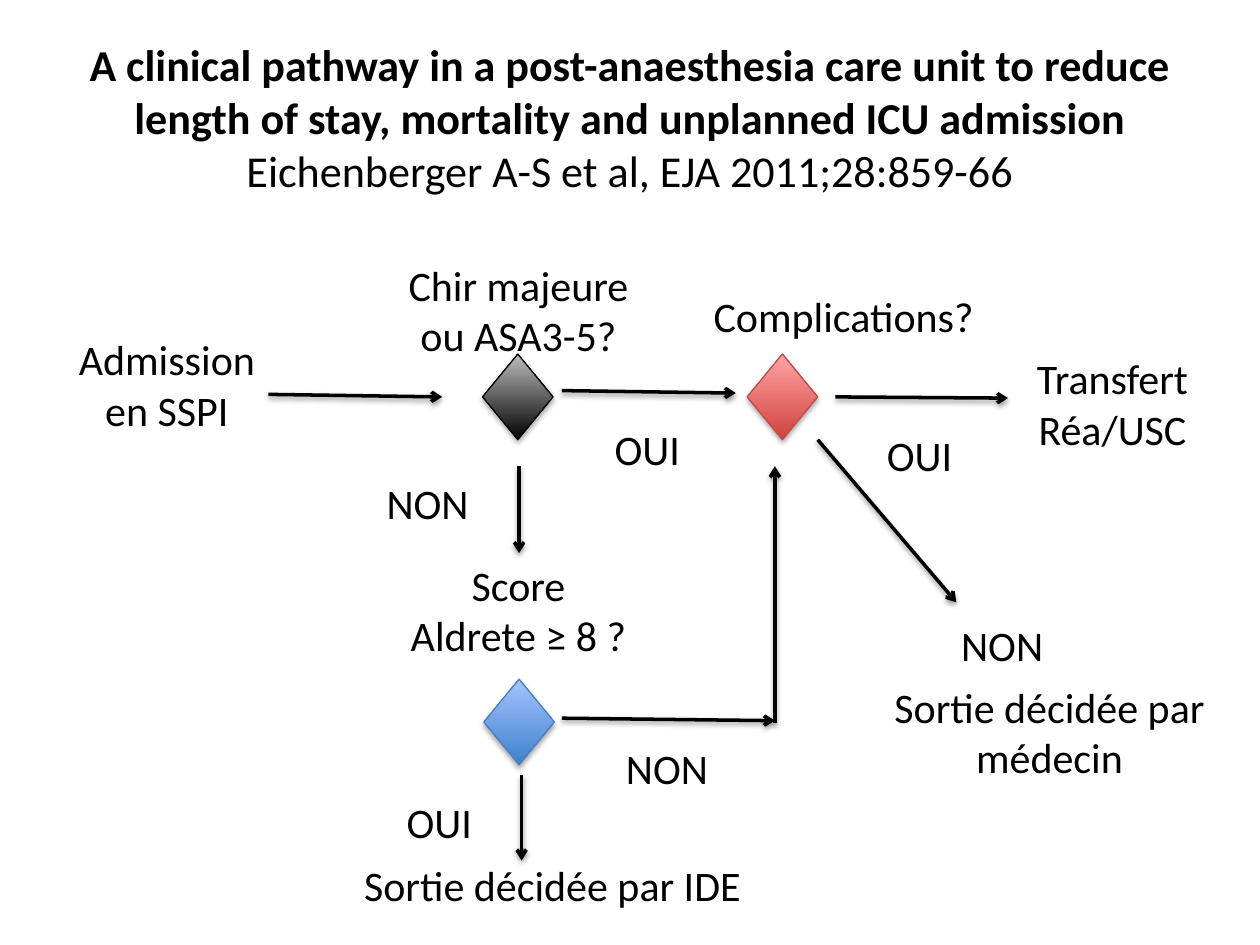
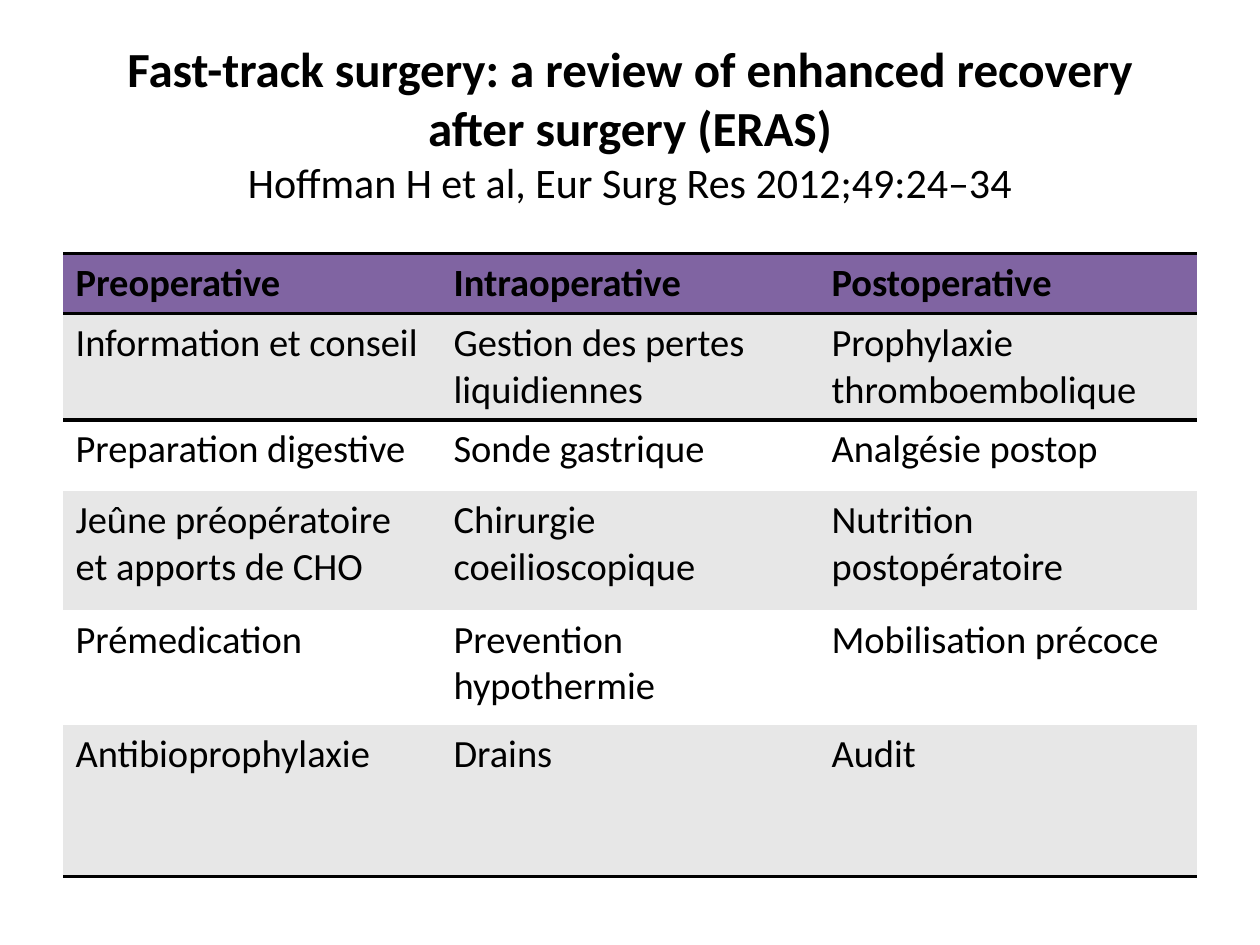
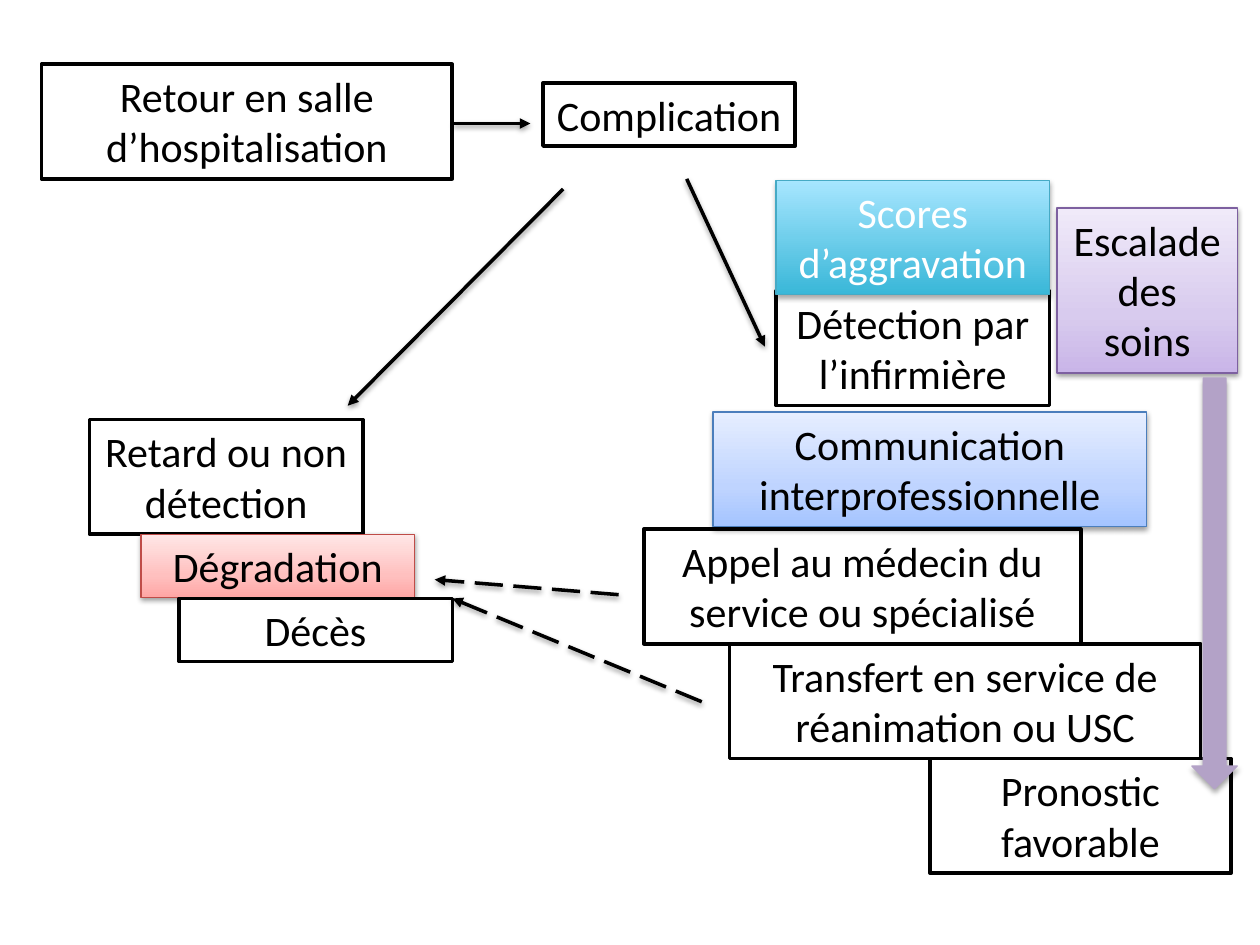
from dataclasses import dataclass
from typing import NamedTuple

from lxml.etree import SubElement
from pptx import Presentation
from pptx.dml.color import RGBColor
from pptx.enum.dml import MSO_LINE_DASH_STYLE as Dash
from pptx.enum.shapes import MSO_CONNECTOR as Connector, MSO_SHAPE as Preset
from pptx.enum.text import MSO_ANCHOR as Anchor, MSO_AUTO_SIZE as AutoSize, PP_ALIGN as Align
from pptx.oxml.ns import qn
from pptx.util import Inches, Pt

BLACK, WHITE = "000000", "FFFFFF"
HEADER_FILL, BAND_FILL = "8064A2", "E7E7E7"
FONT_NAME = "Calibri"
BODY_SIZE, TABLE_SIZE = 24, 22
NO_TABLE_STYLE = "{2D5ABB26-0587-4C30-8999-92F81FD0307C}"
TITLE_ONLY, BLANK = 5, 6


class Shadow(NamedTuple):
    opacity: int
    distance: float


class Look(NamedTuple):
    """Outline, fill stops (percent, colour) from bottom to top, and shadow."""
    line: str
    stops: tuple[tuple[int, str], ...]
    width: float = 0.75
    shadow: Shadow | None = None


class Span(NamedTuple):
    text: str
    size: float
    bold: bool = False


@dataclass
class Box:
    left: float
    top: float
    width: float
    height: float
    text: str = ""
    look: Look | None = None
    align: Align = Align.CENTER
    wrap: bool = True
    color: str = BLACK
    preset: Preset = Preset.RECTANGLE


@dataclass
class Arrow:
    start: tuple[float, float]
    end: tuple[float, float]
    head: str = "arrow"
    dashed: bool = False


STRONG, SOFT = Shadow(35, 1.8), Shadow(38, 1.6)
PLAIN = Look(BLACK, ((0, WHITE),), 2)
GREY = Look(BLACK, ((0, BLACK), (100, "BDBDBD")), shadow=STRONG)
RED = Look("BF4C48", ((0, "D1403C"), (100, "FFA6A5")), shadow=STRONG)
BLUE = Look("4B7EBC", ((0, "3F80CE"), (100, "A4C4FF")), shadow=STRONG)
CYAN = Look("46AAC5", ((0, "39B7D8"), (100, "A7E6FF")), shadow=STRONG)
LILAC = Look("B3A2C7", ((0, "B3A2C7"),), shadow=STRONG)
PALE_RED = Look("BF4C48", ((0, "FFA6A5"), (35, "FFC0BF"), (100, "FFE7E7")), shadow=SOFT)
PALE_BLUE = Look("4B7EBC", ((0, "A4C4FF"), (35, "BFD4FF"), (100, "E6EEFF")), shadow=SOFT)
PALE_PURPLE = Look("7D60A0", ((0, "C9B5E8"), (35, "D8CBEE"), (100, "F0EAF9")), shadow=SOFT)


def rgb(color: str) -> RGBColor:
    return RGBColor.from_string(color)


def set_all(target, values: dict) -> None:
    for name, value in values.items():
        setattr(target, name, value)


def format_font(font, size: float, bold: bool = False, color: str = BLACK) -> None:
    set_all(font, {"name": FONT_NAME, "size": Pt(size), "bold": bold})
    font.color.rgb = rgb(color)


def place(shape, left: float, top: float, width: float, height: float) -> None:
    set_all(shape, {"left": Inches(left), "top": Inches(top),
                    "width": Inches(width), "height": Inches(height)})


def add_color(parent, color: str):
    return SubElement(parent, qn("a:srgbClr"), val=color)


def add_shadow(effects, shadow: Shadow) -> None:
    outer = SubElement(effects, qn("a:outerShdw"), blurRad=str(Pt(3.1)),
                       dist=str(Pt(shadow.distance)), dir="5400000", rotWithShape="0")
    SubElement(add_color(outer, BLACK), qn("a:alpha"), val=str(shadow.opacity * 1000))


def apply_look(shape, look: Look) -> None:
    if len(look.stops) == 1:
        shape.fill.solid()
        shape.fill.fore_color.rgb = rgb(look.stops[0][1])
    else:
        shape.fill.gradient()
        shape.fill.gradient_angle = 90
        stop_list = shape._element.spPr.find(qn("a:gradFill")).find(qn("a:gsLst"))
        for stop in list(stop_list):
            stop_list.remove(stop)
        for percent, color in look.stops:
            add_color(SubElement(stop_list, qn("a:gs"), pos=str(percent * 1000)), color)
    shape.line.color.rgb = rgb(look.line)
    shape.line.width = Pt(look.width)
    shape.shadow.inherit = False
    if look.shadow:
        add_shadow(shape._element.spPr.find(qn("a:effectLst")), look.shadow)


def draw_box(page, box: Box) -> None:
    area = [Inches(value) for value in (box.left, box.top, box.width, box.height)]
    if box.look:
        shape = page.shapes.add_shape(box.preset, *area)
        apply_look(shape, box.look)
    else:
        shape = page.shapes.add_textbox(*area)
    if not box.text:
        return
    frame = shape.text_frame
    set_all(frame, {"text": box.text, "word_wrap": box.wrap, "vertical_anchor": Anchor.TOP,
                    "auto_size": AutoSize.SHAPE_TO_FIT_TEXT})
    for para in frame.paragraphs:
        para.alignment = box.align
        for span in para.runs:
            format_font(span.font, BODY_SIZE, color=box.color)


def draw_arrow(page, arrow: Arrow) -> None:
    points = [Inches(value) for value in (*arrow.start, *arrow.end)]
    connector = page.shapes.add_connector(Connector.STRAIGHT, *points)
    line = connector.line
    line.color.rgb = rgb(BLACK)
    line.width = Pt(2)
    if arrow.dashed:
        line.dash_style = Dash.LONG_DASH
    properties = connector._element.spPr
    SubElement(properties.find(qn("a:ln")), qn("a:tailEnd"), type=arrow.head)
    add_shadow(SubElement(properties, qn("a:effectLst")), SOFT)


def add_title(page, area: tuple[float, float, float, float], spans: list[Span]) -> None:
    """Write the spans one under the other in the title placeholder."""
    title = page.shapes.title
    place(title, *area)
    set_all(title.text_frame, {"vertical_anchor": Anchor.MIDDLE, "word_wrap": True,
                               "auto_size": AutoSize.NONE})
    para = title.text_frame.paragraphs[0]
    para.alignment = Align.CENTER
    for number, span in enumerate(spans):
        if number:
            para.add_line_break()
        for line_number, text in enumerate(span.text.split("\n")):
            if line_number:
                para.add_line_break()
            run = para.add_run()
            run.text = text
            format_font(run.font, span.size, span.bold)


def add_border(cell, side: str) -> None:
    properties = cell._tc.get_or_add_tcPr()
    border = SubElement(properties, qn(f"a:ln{side}"), w=str(Pt(2)))
    add_color(SubElement(border, qn("a:solidFill")), BLACK)
    properties.insert(len(properties.findall(qn("a:lnT"))) if side == "B" else 0, border)


def draw_table(page, rows: list[tuple[str, ...]], heights: list[float]) -> None:
    frame = page.shapes.add_table(len(rows), len(rows[0]), Inches(0.5), Inches(2.01),
                                  Inches(9), Inches(sum(heights)))
    table = frame.table
    table.horz_banding = False
    table._tbl.tblPr.find(qn("a:tableStyleId")).text = NO_TABLE_STYLE
    for row_number, (texts, height) in enumerate(zip(rows, heights)):
        table.rows[row_number].height = Inches(height)
        is_header = row_number == 0
        fill = HEADER_FILL if is_header else BAND_FILL if row_number % 2 else WHITE
        for column, text in enumerate(texts):
            cell = table.cell(row_number, column)
            cell.text = text
            format_font(cell.text_frame.paragraphs[0].runs[0].font, TABLE_SIZE, is_header)
            cell.fill.solid()
            cell.fill.fore_color.rgb = rgb(fill)
            if row_number < 2:
                add_border(cell, "T")
            if is_header or row_number == len(rows) - 1:
                add_border(cell, "B")


def answer(left: float, top: float, text: str) -> Box:
    return Box(left, top, 0.9, 0.51, text, align=Align.LEFT, wrap=False)


def diamond(left: float, top: float, look: Look) -> Box:
    return Box(left, top, 0.56, 0.68, look=look, preset=Preset.DIAMOND)


def build_pathway(deck) -> None:
    page = deck.slides.add_slide(deck.slide_layouts[TITLE_ONLY])
    add_title(page, (0.5, 0.3, 9, 1.25), [
        Span("A clinical pathway in a post-anaesthesia care unit to reduce "
             "length of stay, mortality and unplanned ICU admission", 25.2, True),
        Span("Eichenberger A-S et al, EJA 2011;28:859-66", 25.2),
    ])
    boxes = [
        diamond(3.83, 2.81, GREY),
        diamond(5.93, 2.81, RED),
        diamond(3.84, 5.39, BLUE),
        Box(0.51, 2.6, 1.63, 0.91, "Admission en SSPI"),
        Box(3.13, 2.01, 1.97, 0.91, "Chir majeure\nou ASA3-5?", wrap=False),
        Box(3.13, 4.39, 1.97, 0.91, "Score Aldrete ≥ 8 ?"),
        Box(1.87, 6.77, 5.03, 0.51, "Sortie décidée par IDE"),
        Box(5.39, 2.26, 2.61, 0.5, "Complications?"),
        Box(6.7, 5.36, 3.26, 0.91, "Sortie décidée par médecin"),
        Box(7.7, 2.75, 2.26, 0.91, "Transfert Réa/USC"),
        answer(4.78, 3.31, "OUI"),
        answer(2.97, 3.74, "NON"),
        answer(3.13, 6.27, "OUI"),
        answer(4.87, 5.84, "NON"),
        answer(6.94, 3.36, "OUI"),
        answer(7.53, 4.87, "NON"),
    ]
    arrows = [
        Arrow((2.13, 3.13), (3.51, 3.15)),
        Arrow((4.46, 3.1), (5.84, 3.12)),
        Arrow((6.63, 3.15), (8, 3.16)),
        Arrow((4.12, 3.7), (4.12, 4.39)),
        Arrow((4.46, 5.7), (6.15, 5.72)),
        Arrow((4.14, 6.15), (4.14, 6.83)),
        Arrow((6.49, 3.49), (7.59, 4.78)),
        Arrow((6.15, 5.74), (6.15, 3.7)),
    ]
    draw_diagram(page, boxes, arrows)


def draw_diagram(page, boxes: list[Box], arrows: list[Arrow]) -> None:
    for box in boxes:
        draw_box(page, box)
    for arrow in arrows:
        draw_arrow(page, arrow)


def build_fast_track(deck) -> None:
    page = deck.slides.add_slide(deck.slide_layouts[TITLE_ONLY])
    add_title(page, (0.25, 0.25, 9.5, 1.45), [
        Span("Fast-track surgery: a review of enhanced recovery\nafter surgery (ERAS)", 28, True),
        Span("Hoffman H et al, Eur Surg Res 2012;49:24–34", 24),
    ])
    rows = [
        ("Preoperative", "Intraoperative", "Postoperative"),
        ("Information et conseil", "Gestion des pertes liquidiennes",
         "Prophylaxie thromboembolique"),
        ("Preparation digestive", "Sonde gastrique", "Analgésie postop"),
        ("Jeûne préopératoire et apports de CHO", "Chirurgie coeilioscopique",
         "Nutrition postopératoire"),
        ("Prémedication", "Prevention hypothermie", "Mobilisation précoce"),
        ("Antibioprophylaxie", "Drains", "Audit"),
    ]
    draw_table(page, rows, [0.48, 0.83, 0.56, 0.95, 0.91, 1.2])


def build_escalation(deck) -> None:
    page = deck.slides.add_slide(deck.slide_layouts[BLANK])
    boxes = [
        Box(0.33, 0.51, 3.26, 0.91, "Retour en salle d’hospitalisation", PLAIN),
        Box(4.31, 0.66, 2, 0.5, "Complication", PLAIN, wrap=False),
        Box(6.16, 2.31, 2.17, 0.91, "Détection par l’infirmière", PLAIN),
        Box(5.11, 4.2, 3.47, 0.91, "Appel au médecin du service ou spécialisé", PLAIN),
        Box(5.79, 5.11, 3.74, 0.91, "Transfert en service de réanimation ou USC", PLAIN),
        Box(7.38, 6.02, 2.39, 0.91, "Pronostic favorable", PLAIN),
        Box(0.71, 3.33, 2.17, 0.91, "Retard ou non détection", PLAIN),
        Box(1.12, 4.24, 2.17, 0.5, "Dégradation", PALE_RED),
        Box(1.42, 4.75, 2.17, 0.5, "Décès", PLAIN),
        Box(5.66, 3.27, 3.44, 0.91, "Communication interprofessionnelle", PALE_BLUE),
        Box(6.16, 1.43, 2.17, 0.91, "Scores d’aggravation", CYAN, color=WHITE),
        Box(8.39, 1.65, 1.43, 1.31, "Escalade des soins", PALE_PURPLE),
        Box(9.46, 3, 0.36, 3.26, look=LILAC, preset=Preset.DOWN_ARROW),
    ]
    arrows = [
        Arrow((4.91, 4.72), (3.45, 4.6), "triangle", dashed=True),
        Arrow((5.57, 5.57), (3.59, 4.75), "triangle", dashed=True),
        Arrow((3.6, 0.98), (4.21, 0.98), "triangle"),
        Arrow((5.45, 1.42), (6.07, 2.75), "triangle"),
        Arrow((4.47, 1.5), (2.76, 3.22), "triangle"),
    ]
    draw_diagram(page, boxes, arrows)


def main() -> None:
    deck = Presentation()
    set_all(deck, {"slide_width": Inches(10), "slide_height": Inches(7.5)})
    build_pathway(deck)
    build_fast_track(deck)
    build_escalation(deck)
    deck.save("out.pptx")


if __name__ == "__main__":
    main()
